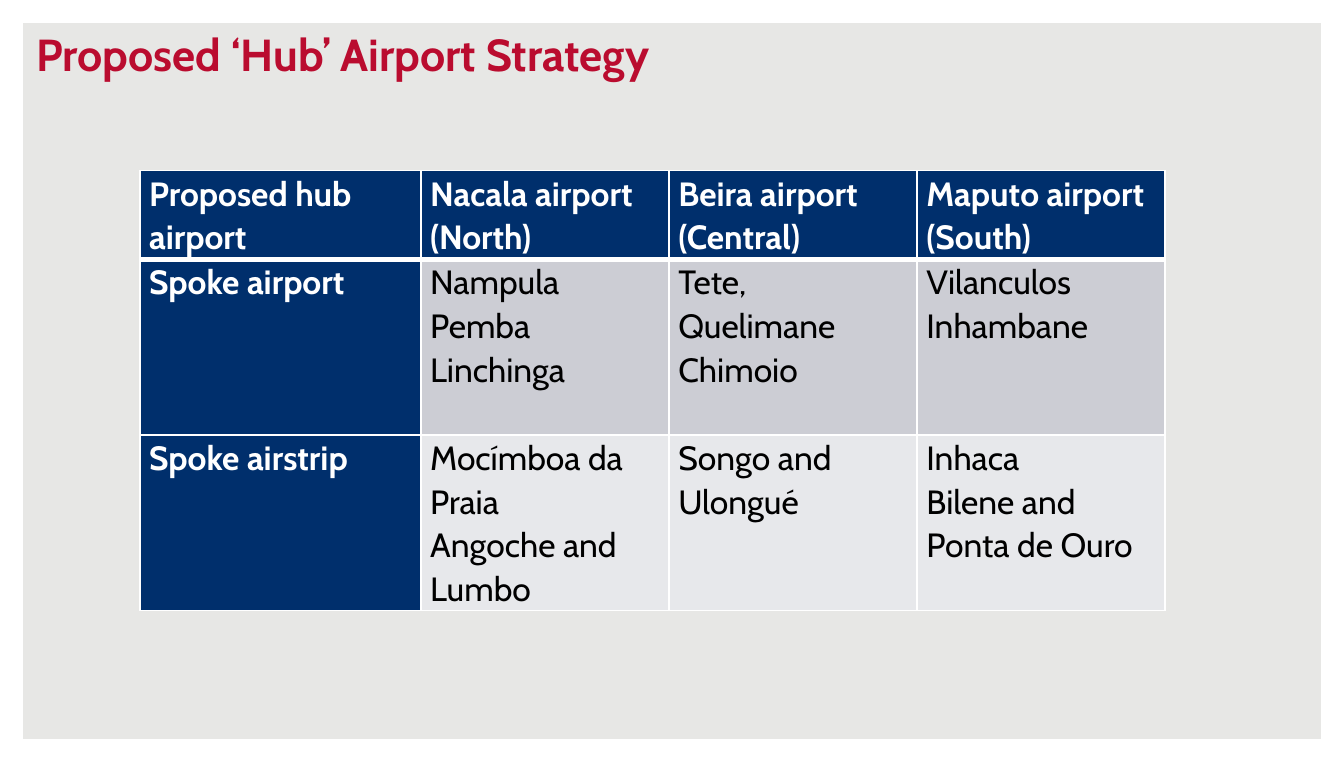
from collections import namedtuple
from dataclasses import dataclass

from lxml.etree import SubElement
from pptx import Presentation
from pptx.dml.color import RGBColor
from pptx.enum.shapes import MSO_SHAPE as Shape
from pptx.enum.text import MSO_ANCHOR as Anchor, PP_ALIGN as Align
from pptx.oxml.ns import qn
from pptx.util import Inches, Pt

Box = namedtuple("Box", "left top width height")


@dataclass(frozen=True)
class Theme:
    font: str = "Cabin"
    background: str = "E7E7E5"
    white: str = "FFFFFF"
    black: str = "000000"
    red: str = "BA0C2F"
    navy: str = "002F6C"
    bands: tuple = ("CCCDD4", "E7E8EB")
    title_size: float = 24
    table_size: float = 18
    line_spacing: float = 1.07


THEME = Theme()
PAGE = Box(0, 0, Inches(10), Inches(5.67))

COLUMN_SHARES = (0.274, 0.242, 0.242, 0.242)
ROW_SHARES = (0.202, 0.399, 0.399)
AIRPORTS = (
    ("Proposed hub airport", "Nacala airport (North)",
     "Beira airport (Central)", "Maputo airport (South)"),
    ("Spoke airport", "Nampula\nPemba\nLinchinga",
     "Tete,\nQuelimane\nChimoio", "Vilanculos\nInhambane"),
    ("Spoke airstrip", "Mocímboa da Praia\nAngoche and\nLumbo",
     "Songo and\nUlongué", "Inhaca\nBilene and\nPonta de Ouro"),
)


def part(box, left, top, width, height):
    """Return a box given as shares of another box."""
    return Box(round(box.left + left * box.width), round(box.top + top * box.height),
               round(width * box.width), round(height * box.height))


def color(value):
    return RGBColor.from_string(value)


def write(frame, text, size, ink, bold=False, spacing=1.0):
    frame.text = text
    frame.word_wrap = True
    for para in frame.paragraphs:
        para.alignment = Align.LEFT
        para.line_spacing = spacing
        for span in para.runs:
            span.font.name = THEME.font
            span.font.size = Pt(size)
            span.font.bold = bold
            span.font.color.rgb = color(ink)


def add_border_frame(page, box):
    frame = page.shapes.add_shape(Shape.FRAME, *box)
    frame.adjustments[0] = 0.03
    frame.shadow.inherit = False
    frame.fill.solid()
    frame.fill.fore_color.rgb = color(THEME.white)
    frame.line.fill.background()


def add_title(page, box, text):
    title = page.shapes.title
    title.left, title.top, title.width, title.height = box
    title.text_frame.vertical_anchor = Anchor.BOTTOM
    write(title.text_frame, text, THEME.title_size, THEME.red, bold=True)


def set_borders(cell, bottom_width):
    """Draw white lines on all sides; they must precede the cell's fill."""
    properties = cell._tc.get_or_add_tcPr()
    for side, width in (("L", 1), ("R", 1), ("T", 1), ("B", bottom_width)):
        line = SubElement(properties, qn(f"a:ln{side}"), w=str(Pt(width)))
        fill = SubElement(line, qn("a:solidFill"))
        SubElement(fill, qn("a:srgbClr"), val=THEME.white)


def add_airport_table(page, box, rows):
    table = page.shapes.add_table(len(rows), len(rows[0]), *box).table
    table.first_col = True
    for column, share in zip(table.columns, COLUMN_SHARES):
        column.width = round(box.width * share)
    for row, share in zip(table.rows, ROW_SHARES):
        row.height = round(box.height * share)
    for row_index, texts in enumerate(rows):
        for column_index, text in enumerate(texts):
            cell = table.cell(row_index, column_index)
            heading = row_index == 0 or column_index == 0
            set_borders(cell, bottom_width=3 if row_index == 0 else 1)
            cell.fill.solid()
            cell.fill.fore_color.rgb = color(
                THEME.navy if heading else THEME.bands[row_index - 1])
            cell.margin_left = cell.margin_right = Inches(0.07)
            cell.margin_top = cell.margin_bottom = 0
            write(cell.text_frame, text, THEME.table_size,
                  THEME.white if heading else THEME.black,
                  bold=heading, spacing=THEME.line_spacing)


def build_strategy_slide(deck):
    page = deck.slides.add_slide(deck.slide_layouts[5])
    page.background.fill.solid()
    page.background.fill.fore_color.rgb = color(THEME.background)
    add_border_frame(page, PAGE)
    add_title(page, part(PAGE, 0.017, 0.026, 0.85, 0.088),
              "Proposed ‘Hub’ Airport Strategy")
    add_airport_table(page, part(PAGE, 0.104, 0.224, 0.763, 0.577), AIRPORTS)


def main():
    deck = Presentation()
    deck.slide_width, deck.slide_height = PAGE.width, PAGE.height
    build_strategy_slide(deck)
    deck.save("out.pptx")


if __name__ == "__main__":
    main()
